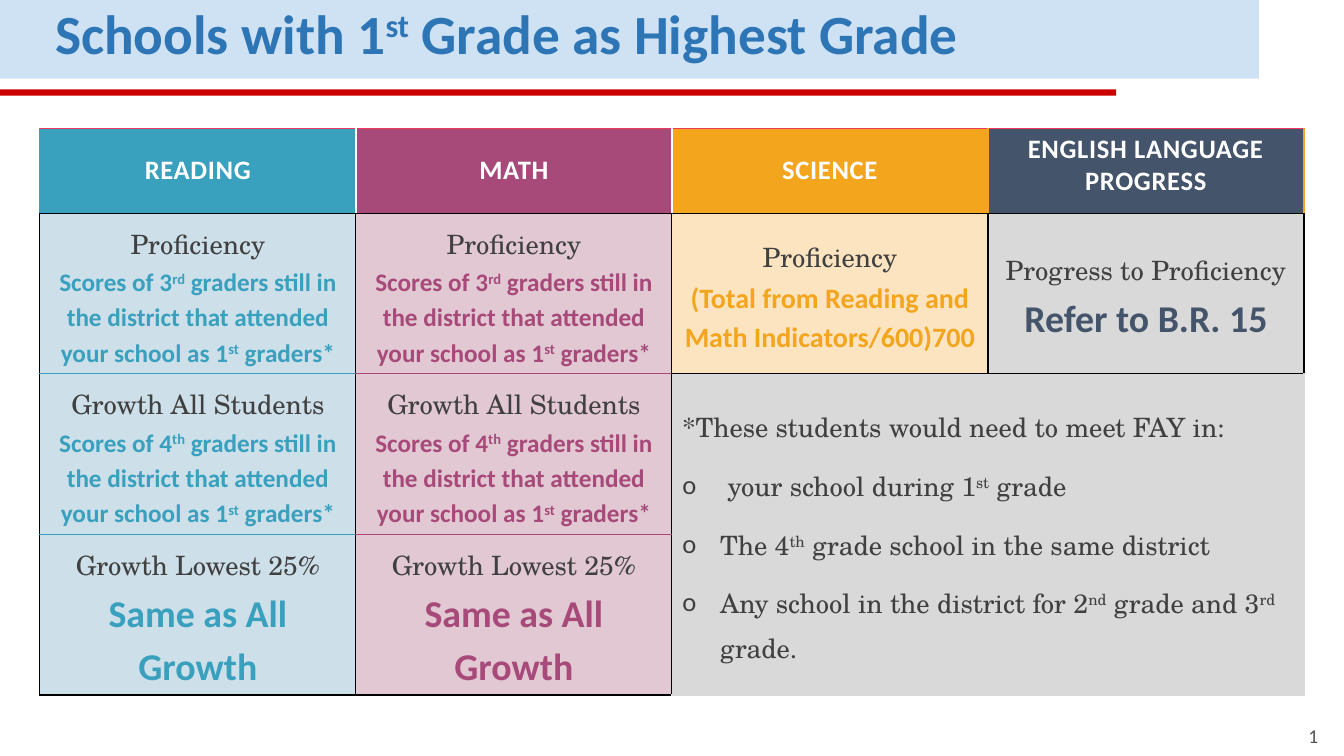
from lxml import etree
from pptx import Presentation
from pptx.dml.color import RGBColor
from pptx.enum.shapes import MSO_SHAPE
from pptx.enum.text import MSO_ANCHOR, PP_ALIGN
from pptx.oxml.ns import qn
from pptx.util import Emu, Pt

RECT = MSO_SHAPE.RECTANGLE
LEFT, CENTER, RIGHT = PP_ALIGN.LEFT, PP_ALIGN.CENTER, PP_ALIGN.RIGHT
TOP, MIDDLE, BOTTOM = MSO_ANCHOR.TOP, MSO_ANCHOR.MIDDLE, MSO_ANCHOR.BOTTOM
SANS, SERIF = "Calibri", "TeX Gyre Schola"
BLACK, WHITE, GRAY, INK = "000000", "FFFFFF", "D9D9D9", "404040"
TEAL, PLUM, GOLD, NAVY = "39A0BE", "A74A7A", "F3A51D", "44546A"
HEADS = [("READING", TEAL), ("MATH", PLUM), ("SCIENCE", GOLD),
         ("ENGLISH LANGUAGE PROGRESS", NAVY)]
SCORES = ("Scores of {} graders still in the district "
          "that attended your school as 1^st^ graders*")
GOALS = [("Proficiency", SCORES.format("3^rd^"), 18),
         ("Growth All Students", SCORES.format("4^th^"), 18),
         ("Growth Lowest 25%", "Same as All Growth", 27)]
NOTES = ["*These students would need to meet FAY in:",
         " your school during 1^st^ grade",
         "The 4^th^ grade school in the same district",
         "Any school in the district for 2^nd^ grade and 3^rd^ grade."]


def px(n):
    return Emu(n * 9525)


def color(code):
    return RGBColor.from_string(code)


def style(font, size, face, code, bold=False):
    font.size, font.name, font.bold = Pt(size), face, bold
    font.color.rgb = color(code)


def write(para, text):
    """Add runs to a paragraph; text between carets is superscript."""
    runs = []
    for i, part in enumerate(text.split("^")):
        run = para.add_run()
        run.text = part
        if i % 2:
            run._r.get_or_add_rPr().set("baseline", "30000")
        runs.append(run)
    return runs


def add_bar(slide, width, top, height, code):
    bar = slide.shapes.add_shape(RECT, 0, px(top), px(width), px(height))
    bar.shadow.inherit = False
    bar.fill.solid()
    bar.fill.fore_color.rgb = color(code)
    bar.line.fill.background()


def add_text(slide, box, text, anchor, align):
    frame = slide.shapes.add_textbox(*map(px, box)).text_frame
    frame.word_wrap = True
    frame.vertical_anchor = anchor
    para = frame.paragraphs[0]
    para.alignment = align
    write(para, text)
    return para


def add_bullet(para):
    props = para._p.get_or_add_pPr()
    props.set("marL", str(px(36)))
    props.set("indent", str(px(-36)))
    etree.SubElement(props, qn("a:buFont")).set("typeface", SANS)
    etree.SubElement(props, qn("a:buChar")).set("char", "o")


def paint(cell, fill, left=BLACK, right=BLACK, top=BLACK, bottom=BLACK,
          wide=""):
    """Fill a cell and draw its borders; sides named in wide are thicker."""
    cell.fill.solid()
    cell.fill.fore_color.rgb = color(fill)
    cell.vertical_anchor = MIDDLE
    cell.margin_left = cell.margin_right = px(10)
    cell.margin_top = cell.margin_bottom = px(5)
    props = cell._tc.get_or_add_tcPr()
    for i, (side, code) in enumerate(zip("LRTB", (left, right, top, bottom))):
        line = etree.Element(qn("a:ln" + side))
        line.set("w", str(Pt(2.25 if side in wide else 1)))
        solid = etree.SubElement(line, qn("a:solidFill"))
        etree.SubElement(solid, qn("a:srgbClr")).set("val", code)
        props.insert(i, line)


def start(cell, align=CENTER, after=10):
    para = cell.text_frame.paragraphs[0]
    para.alignment = align
    para.line_spacing = 1.15
    para.space_after = Pt(after)
    return para


def fill_goal(cell, name, detail, size, code):
    para = start(cell)
    for run in write(para, name):
        style(run.font, 19, SERIF, INK)
    para.add_line_break()
    for run in write(para, detail):
        style(run.font, size, SANS, code, True)


def fill_head(table):
    sides = [(TEAL, WHITE, "R"), (WHITE, WHITE, "LR"),
             (WHITE, GOLD, "L"), (GOLD, GOLD, "")]
    for col, ((text, code), (left, right, wide)) in enumerate(
            zip(HEADS, sides)):
        cell = table.cell(0, col)
        paint(cell, code, left, right, top="EE3A5A", wide=wide)
        para = cell.text_frame.paragraphs[0]
        para.alignment = CENTER
        for run in write(para, text):
            run._r.get_or_add_rPr().set("spc", "50")
        style(para.font, 19, SANS, WHITE, True)
    table.cell(0, 3).vertical_anchor = TOP


def fill_notes(table):
    cell = table.cell(2, 2)
    cell.merge(table.cell(3, 3))
    paint(cell, GRAY, right=GRAY, bottom=GRAY)
    for spot in ((2, 3), (3, 2), (3, 3)):
        paint(table.cell(*spot), GRAY, *[GRAY] * 4)
    for i, text in enumerate(NOTES):
        para = cell.text_frame.add_paragraph() if i else start(cell, LEFT)
        para.line_spacing = 1.15
        para.space_after = Pt(10)
        if i:
            add_bullet(para)
        write(para, text)
        style(para.font, 19, SERIF, INK)


def fill_progress(cell):
    paint(cell, GRAY)
    first = start(cell, after=0)
    write(first, "Progress to Proficiency")
    style(first.font, 19, SERIF, INK)
    second = cell.text_frame.add_paragraph()
    second.alignment = CENTER
    second.line_spacing = 1.15
    write(second, "Refer to B.R. 15")
    style(second.font, 27, SANS, NAVY, True)


def add_grid(slide):
    table = slide.shapes.add_table(
        4, 4, px(38), px(122), px(1204), px(540)).table
    table.first_row = table.horz_banding = False
    for col in table.columns:
        col.width = px(301)
    for i, row in enumerate(table.rows):
        row.height = px(153 if i else 81)
    fill_head(table)
    for col, (code, tint) in enumerate([(TEAL, "CDDFE9"), (PLUM, "E1C8D2")]):
        for row, goal in enumerate(GOALS, 1):
            cell = table.cell(row, col)
            paint(cell, tint, top=BLACK if row == 1 else code,
                  bottom=BLACK if row == 3 else code)
            fill_goal(cell, *goal, code)
    science = table.cell(1, 2)
    paint(science, "FCE4C1")
    fill_goal(science, "Proficiency",
              "(Total from Reading and Math Indicators/600)700", 20, GOLD)
    fill_progress(table.cell(1, 3))
    fill_notes(table)


def main():
    deck = Presentation()
    deck.slide_width, deck.slide_height = px(1280), px(720)
    slide = deck.slides.add_slide(deck.slide_layouts[6])
    add_bar(slide, 1199, 0, 75, "CFE2F3")
    add_bar(slide, 1063, 85, 6, "CC0000")
    title = add_text(slide, (43, 5, 1156, 63),
                     "Schools with 1^st^ Grade as Highest Grade", MIDDLE, LEFT)
    title.line_spacing = 0.8
    style(title.font, 39.5, SANS, "2E75B6", True)
    number = add_text(slide, (1188, 684, 77, 33), "1", BOTTOM, RIGHT)
    style(number.font, 14, SANS, "525252")
    add_grid(slide)
    deck.save("out.pptx")


if __name__ == "__main__":
    main()
